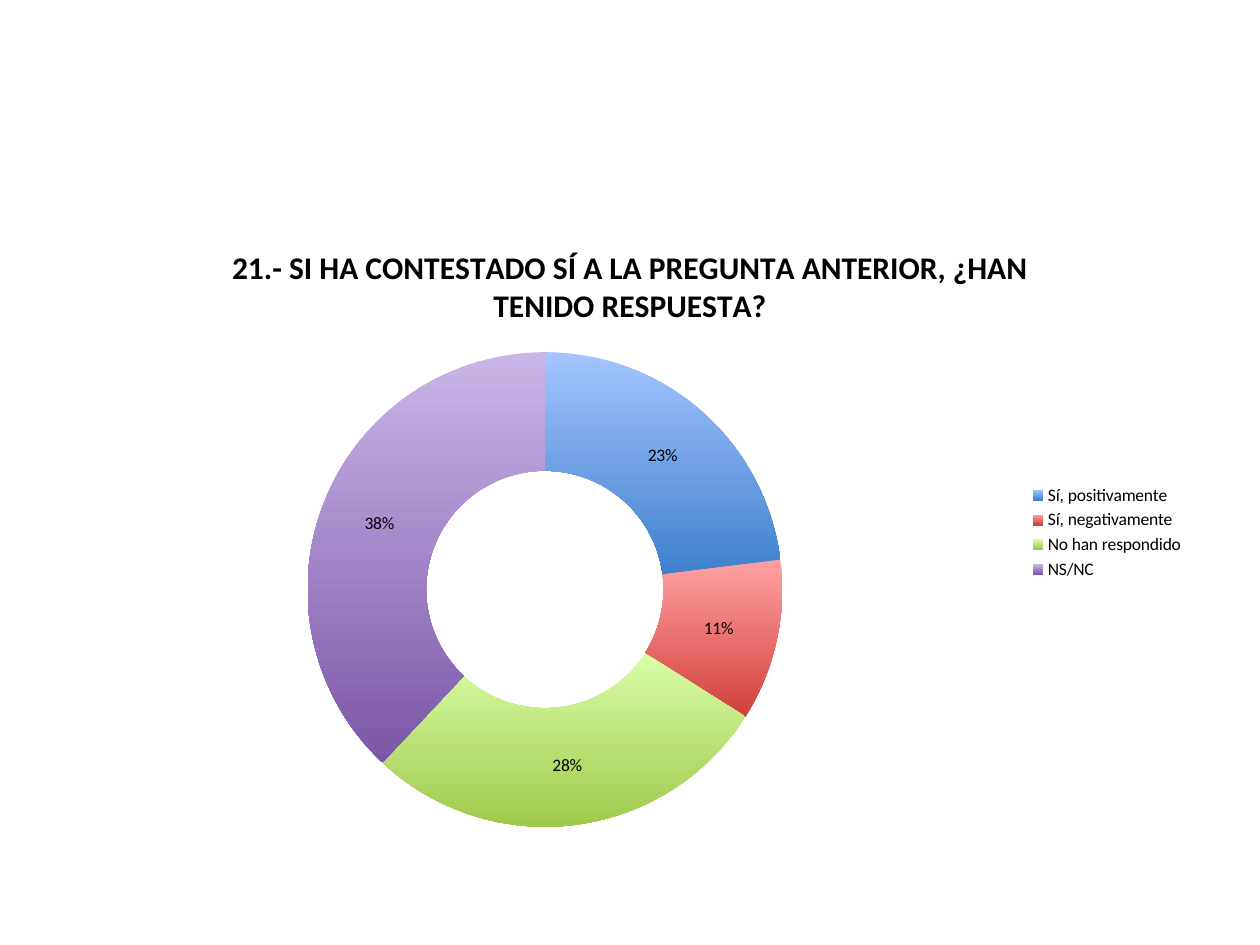
from pptx import Presentation
from pptx.chart.data import CategoryChartData
from pptx.dml.color import RGBColor
from pptx.enum.chart import XL_CHART_TYPE, XL_LEGEND_POSITION
from pptx.util import Inches, Pt

DOUGHNUT = XL_CHART_TYPE.DOUGHNUT
RIGHT = XL_LEGEND_POSITION.RIGHT
FONT = "Calibri"

# Content
QUESTION = ("21.- SI HA CONTESTADO SÍ A LA PREGUNTA ANTERIOR, "
            "¿HAN TENIDO RESPUESTA?")
# answer, percentage, colour name
ANSWERS = [
    ("Sí, positivamente", 23, "blue"),
    ("Sí, negativamente", 11, "red"),
    ("No han respondido", 28, "green"),
    ("NS/NC", 38, "purple"),
]
COLORS = {
    "text": "000000",
    "blue": ("A3C4FF", "3F80CD"),
    "red": ("FFA2A1", "D1403C"),
    "green": ("DAFDA7", "9FC94C"),
    "purple": ("C9B5E8", "7B57A8"),
}


def set_font(font, size, bold=False, color=COLORS["text"]):
    font.name = FONT
    font.size = Pt(size)
    font.bold = bold
    font.color.rgb = RGBColor.from_string(color)


def set_text(tf, text, **fmt):
    p = tf.paragraphs[0]
    r = p.add_run()
    r.text = text
    set_font(r.font, **fmt)


def fill_downwards(fill, colors):
    fill.gradient()
    fill.gradient_angle = 270
    for stop, color in zip(fill.gradient_stops, colors):
        stop.color.rgb = RGBColor.from_string(color)


prs = Presentation()
prs.slide_width, prs.slide_height = Inches(10), Inches(7.5)
s = prs.slides.add_slide(prs.slide_layouts[6])

# Doughnut chart
data = CategoryChartData()
data.categories = [answer for answer, _, _ in ANSWERS]
data.add_series(QUESTION, [value for _, value, _ in ANSWERS])
chart = s.shapes.add_chart(DOUGHNUT, Inches(0.5), Inches(1.75),
                           Inches(9), Inches(4.95), data).chart
set_font(chart.font, 10)

# Title and legend
chart.has_title = True
set_text(chart.chart_title.text_frame, QUESTION, size=18, bold=True)
chart.chart_title.include_in_layout = False
chart.has_legend = True
chart.legend.position = RIGHT
chart.legend.include_in_layout = False
set_font(chart.legend.font, 10)

# Slices and percentage labels
plot = chart.plots[0]
plot.vary_by_categories = True
for i, (_, _, name) in enumerate(ANSWERS):
    fill_downwards(plot.series[0].points[i].format.fill, COLORS[name])
plot.has_data_labels = True
labels = plot.data_labels
labels.show_percentage = True
labels.show_value = False
labels.number_format = "0%"
labels.number_format_is_linked = False
set_font(labels.font, 10)

prs.save("out.pptx")
